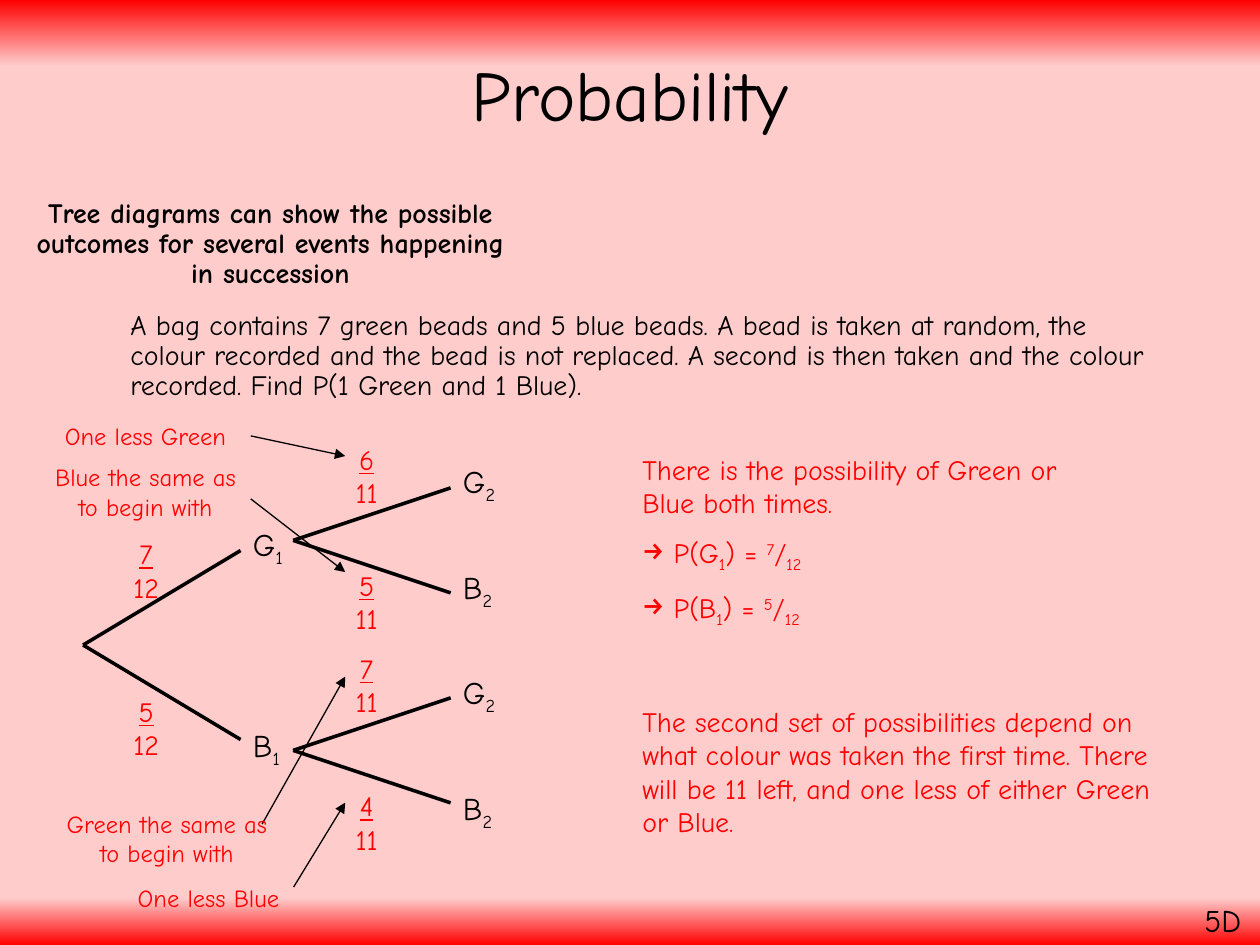
from dataclasses import dataclass
from typing import Optional

from lxml import etree
from pptx import Presentation
from pptx import util as u
from pptx.dml.color import RGBColor
from pptx.enum import shapes, text
from pptx.oxml.ns import qn


@dataclass(frozen=True)
class Theme:
    font: str = "Comic Neue"
    ink: str = "000000"
    accent: str = "FF0000"
    paper: str = "FFCCCC"
    title: float = 40.5
    node: float = 18
    body: float = 16
    note: float = 14
    branch: float = 2
    pointer: float = 0.75
    line_spacing: float = 0.9
    gap: float = 9.5


THEME = Theme()
SUBSCRIPT, SUPERSCRIPT = -25000, 30000
LEFT, CENTER = text.PP_ALIGN.LEFT, text.PP_ALIGN.CENTER


@dataclass(frozen=True)
class Run:
    words: str
    size: float = THEME.body
    color: str = THEME.accent
    bold: bool = False
    underline: bool = False
    baseline: int = 0


@dataclass(frozen=True)
class Box:
    left: float
    top: float
    width: float
    height: float


@dataclass(frozen=True)
class Fork:
    x: float
    y: float
    rise: float


@dataclass(frozen=True)
class Node:
    letter: str
    index: str
    x: float
    y: float


@dataclass(frozen=True)
class Fraction:
    top: str
    bottom: str
    x: float
    y: float


@dataclass(frozen=True)
class Note:
    words: str
    x: float
    y: float
    height: float


@dataclass(frozen=True)
class Pointer:
    x1: float
    y1: float
    x2: float
    y2: float


FORKS = [Fork(47.5, 368.6, 54), Fork(167.5, 308.8, 30), Fork(167.5, 428.8, 30)]
NODES = [
    Node("G", "1", 137.5, 296.6), Node("B", "1", 137.5, 411.1),
    Node("G", "2", 257.5, 260.6), Node("B", "2", 257.5, 321.1),
    Node("G", "2", 257.5, 380.9), Node("B", "2", 257.5, 447.1),
]
FRACTIONS = [
    Fraction("7", "12", 65.5, 303.1), Fraction("5", "12", 65.5, 393.1),
    Fraction("6", "11", 191.5, 249.1), Fraction("5", "11", 191.5, 321.1),
    Fraction("7", "11", 191.5, 368.6), Fraction("4", "11", 191.5, 447.1),
]
NOTES = [
    Note("One less Green", 17.3, 236.9, 24),
    Note("Blue the same as to begin with", 17.3, 260.6, 41),
    Note("Green the same as to begin with", 29.5, 458.6, 41),
    Note("One less Blue", 53.3, 501.1, 24),
]
POINTERS = [
    Pointer(143.3, 249.1, 197.3, 260.6), Pointer(143.3, 285.1, 197.3, 326.9),
    Pointer(149.8, 470.9, 197.3, 386.6), Pointer(167.8, 506.9, 197.3, 458.6),
]


def add_runs(paragraph, runs: list[Run], align=LEFT) -> None:
    paragraph.alignment = align
    for item in runs:
        run = paragraph.add_run()
        run.text = item.words
        font = run.font
        font.name, font.size, font.bold = THEME.font, u.Pt(item.size), item.bold
        font.underline = item.underline
        font.color.rgb = RGBColor.from_string(item.color)
        if item.baseline:
            font._element.set("baseline", str(item.baseline))


def add_text(slide, box: Box, runs: list[Run], align=LEFT, wrap: bool = True,
             spacing: Optional[float] = None, grow: bool = True):
    shape = slide.shapes.add_textbox(
        u.Pt(box.left), u.Pt(box.top), u.Pt(box.width), u.Pt(box.height))
    frame = shape.text_frame
    frame.word_wrap = wrap
    frame.auto_size = (text.MSO_AUTO_SIZE.SHAPE_TO_FIT_TEXT if grow
                       else text.MSO_AUTO_SIZE.NONE)
    paragraph = frame.paragraphs[0]
    if spacing:
        paragraph.line_spacing = spacing
    add_runs(paragraph, runs, align)
    return frame


def add_line(slide, x1: float, y1: float, x2: float, y2: float,
             width: float, arrow: bool = False) -> None:
    connector = slide.shapes.add_connector(
        shapes.MSO_CONNECTOR.STRAIGHT, u.Pt(x1), u.Pt(y1), u.Pt(x2), u.Pt(y2))
    connector.line.color.rgb = RGBColor.from_string(THEME.ink)
    connector.line.width = u.Pt(width)
    properties = connector._element.spPr
    if arrow:
        etree.SubElement(properties.find(qn("a:ln")), qn("a:tailEnd"), type="triangle")
    etree.SubElement(properties, qn("a:effectLst"))


def add_fork(slide, fork: Fork) -> None:
    for rise in (-fork.rise, fork.rise):
        add_line(slide, fork.x, fork.y, fork.x + 90, fork.y + rise, THEME.branch)


def add_node(slide, node: Node) -> None:
    add_text(slide, Box(node.x, node.y, 36, 29), [
        Run(node.letter, THEME.node, THEME.ink),
        Run(node.index, THEME.node, THEME.ink, baseline=SUBSCRIPT)])


def add_fraction(slide, fraction: Fraction) -> None:
    add_text(slide, Box(fraction.x, fraction.y, 36, 46),
             [Run(fraction.top, underline=True), Run(f" {fraction.bottom}")], CENTER)


def add_probability(frame, letter: str, numerator: str) -> None:
    paragraph = frame.add_paragraph()
    paragraph.space_before = u.Pt(THEME.gap)
    etree.SubElement(paragraph._p.get_or_add_pPr(), qn("a:buChar"), char="→")
    add_runs(paragraph, [
        Run(f" P({letter}"), Run("1", baseline=SUBSCRIPT), Run(") = "),
        Run(numerator, baseline=SUPERSCRIPT), Run("/"), Run("12", baseline=SUBSCRIPT)])


def paint_background(slide) -> None:
    fill = slide.background.fill
    fill.gradient()
    fill.gradient_angle = 270
    stops = next(slide._element.iter(qn("a:gsLst")))
    for stop in list(stops):
        stops.remove(stop)
    for percent, color in ((0, THEME.accent), (7, THEME.paper),
                           (95, THEME.paper), (100, THEME.accent)):
        stop = etree.SubElement(stops, qn("a:gs"), pos=str(percent * 1000))
        etree.SubElement(stop, qn("a:srgbClr"), val=color)


def set_title(slide, words: str) -> None:
    title = slide.shapes.title
    title.left, title.top = u.Pt(49.5), u.Pt(17.3)
    title.width, title.height = u.Pt(621), u.Pt(78.5)
    frame = title.text_frame
    frame.auto_size = text.MSO_AUTO_SIZE.NONE
    frame.vertical_anchor = text.MSO_ANCHOR.MIDDLE
    frame.paragraphs[0].line_spacing = THEME.line_spacing
    add_runs(frame.paragraphs[0], [Run(words, THEME.title, THEME.ink)], CENTER)


def main() -> None:
    presentation = Presentation()
    presentation.slide_width, presentation.slide_height = u.Pt(720), u.Pt(540)
    slide = presentation.slides.add_slide(presentation.slide_layouts[5])
    paint_background(slide)
    set_title(slide, "Probability")
    add_text(slide, Box(11.5, 110.2, 286, 375.8), [Run(
        "Tree diagrams can show the possible outcomes for several events "
        "happening in succession", color=THEME.ink, bold=True)],
        CENTER, spacing=THEME.line_spacing, grow=False)
    add_text(slide, Box(681.1, 511.2, 38.9, 29),
             [Run("5D", THEME.node, THEME.ink)], wrap=False)
    example = add_text(slide, Box(49.5, 174.2, 621, 312.5), [Run(
        "A bag contains 7 green beads and 5 blue beads. A bead is taken at random, "
        "the colour recorded and the bead is not replaced. A second is then taken "
        "and the colour recorded. Find P(1 Green and 1 Blue).", color=THEME.ink)],
        spacing=THEME.line_spacing, grow=False)
    example.paragraphs[0]._p.get_or_add_pPr().set("marL", str(u.Pt(18)))
    for fork in FORKS:
        add_fork(slide, fork)
    for node in NODES:
        add_node(slide, node)
    for fraction in FRACTIONS:
        add_fraction(slide, fraction)
    first = add_text(slide, Box(360, 254.9, 275.8, 103.7), [Run(
        "There is the possibility of Green or Blue both times.")])
    for letter, numerator in (("G", "7"), ("B", "5")):
        add_probability(first, letter, numerator)
    add_text(slide, Box(360, 398.9, 324, 84.2), [Run(
        "The second set of possibilities depend on what colour was taken the first "
        "time. There will be 11 left, and one less of either Green or Blue.")])
    for pointer in POINTERS:
        add_line(slide, pointer.x1, pointer.y1, pointer.x2, pointer.y2,
                 THEME.pointer, arrow=True)
    for note in NOTES:
        add_text(slide, Box(note.x, note.y, 131.8, note.height),
                 [Run(note.words, THEME.note)], CENTER)
    presentation.save("out.pptx")


if __name__ == "__main__":
    main()
